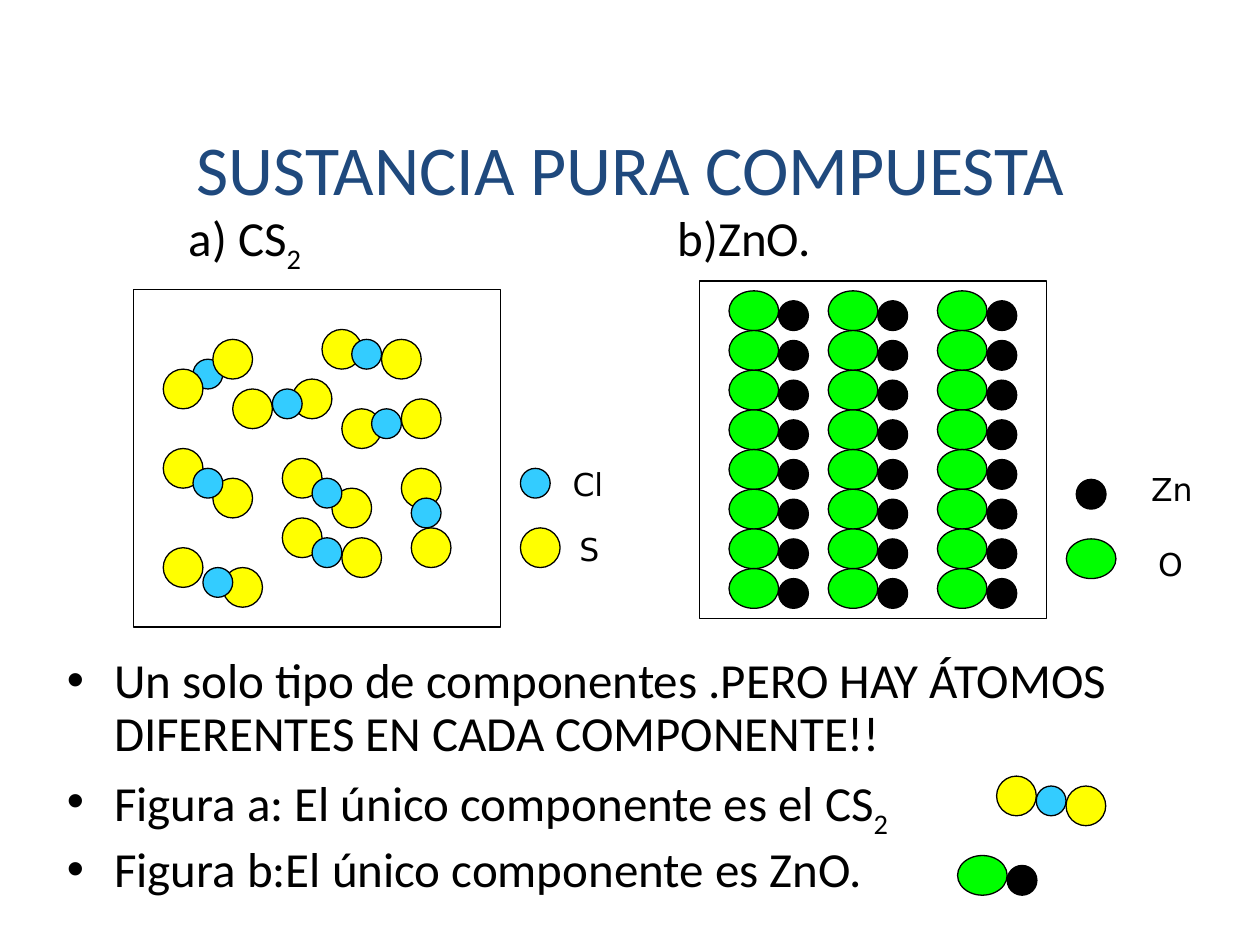
import dataclasses

import pptx
import pptx.dml.color
import pptx.enum.shapes
import pptx.enum.text
import pptx.util


@dataclasses.dataclass(frozen=True)
class Theme:
    """Colours, type sizes and the drawing grid."""
    title: str = "1F497D"
    ink: str = "000000"
    font: str = "Calibri"
    label_font: str = "DejaVu Sans"
    title_size: int = 40
    body_size: int = 28
    label_size: int = 18
    line: float = 0.75
    cell: int = pptx.util.Mm(2)


THEME = Theme()

ATOMS = {
    "S": ("FFFF00", 4, 4),
    "Cl": ("33CCFF", 3, 3),
    "O": ("00FF00", 5, 4),
    "Zn": ("000000", 3, 3),
}

CS2_MOLECULES = [
    [("Cl", 6, 7), ("S", 8, 5), ("S", 3, 8)],
    [("S", 19, 4), ("S", 25, 5), ("Cl", 22, 5)],
    [("S", 10, 10), ("S", 16, 9), ("Cl", 14, 10)],
    [("S", 21, 12), ("S", 27, 11), ("Cl", 24, 12)],
    [("S", 3, 16), ("S", 8, 19), ("Cl", 6, 18)],
    [("S", 15, 17), ("S", 20, 20), ("Cl", 18, 19)],
    [("S", 15, 23), ("S", 21, 25), ("Cl", 18, 25)],
    [("S", 3, 26), ("S", 9, 28), ("Cl", 7, 28)],
    [("S", 27, 18), ("Cl", 28, 21), ("S", 28, 24)],
]
CS2_EXAMPLE = [("S", 0, 0), ("Cl", 4, 1), ("S", 7, 1)]
ZNO_PAIR = [("O", 0, 0), ("Zn", 5, 1)]


def origin(left, top):
    """Return a corner given in inches as slide lengths."""
    return pptx.util.Inches(left), pptx.util.Inches(top)


def grid_box(corner, column, row, columns, rows):
    """Return the place and size of a block of grid cells."""
    left, top = corner
    lengths = [round(count * THEME.cell) for count in (column, row, columns, rows)]
    return left + lengths[0], top + lengths[1], lengths[2], lengths[3]


def style_font(font, name, size, colour):
    """Set the face, size and colour of a font."""
    font.name = name
    font.size = pptx.util.Pt(size)
    font.color.rgb = pptx.dml.color.RGBColor.from_string(colour)


def add_outlined(page, kind, box, colour=None):
    """Add a thinly outlined shape, filled if a colour is given."""
    shape = page.shapes.add_shape(kind, *box)
    shape.shadow.inherit = False
    if colour:
        shape.fill.solid()
        shape.fill.fore_color.rgb = pptx.dml.color.RGBColor.from_string(colour)
    else:
        shape.fill.background()
    shape.line.color.rgb = pptx.dml.color.RGBColor.from_string(THEME.ink)
    shape.line.width = pptx.util.Pt(THEME.line)


def add_frame(page, corner, columns, rows):
    """Draw the container of a figure."""
    kind = pptx.enum.shapes.MSO_SHAPE.RECTANGLE
    add_outlined(page, kind, grid_box(corner, 0, 0, columns, rows))


def add_atoms(page, corner, atoms, column=0, row=0):
    """Draw a group of atoms shifted by a number of cells."""
    for name, across, down in atoms:
        colour, columns, rows = ATOMS[name]
        box = grid_box(corner, column + across, row + down, columns, rows)
        add_outlined(page, pptx.enum.shapes.MSO_SHAPE.OVAL, box, colour)


def add_legend(page, corner, entries):
    """Draw each legend atom and its label."""
    for name, atom_place, label_place in entries:
        add_atoms(page, corner, [(name, *atom_place)])
        box = page.shapes.add_textbox(*grid_box(corner, *label_place, 5))
        box.text_frame.word_wrap = True
        box.text_frame.text = name
        span = box.text_frame.paragraphs[0].runs[0]
        style_font(span.font, THEME.label_font, THEME.label_size, THEME.ink)


def write_formula(para, text, subscript=""):
    """Write body text with an optional subscript at its end."""
    para.text = text
    if subscript:
        span = para.add_run()
        span.text = subscript
        span._r.get_or_add_rPr().set("baseline", "-25000")
    for span in para.runs:
        style_font(span.font, THEME.font, THEME.body_size, THEME.ink)


def place(shape, left, top, width, height):
    """Move a placeholder to a box in inches."""
    shape.left, shape.top = origin(left, top)
    shape.width, shape.height = origin(width, height)
    shape.text_frame.auto_size = pptx.enum.text.MSO_AUTO_SIZE.NONE


def add_title(page, box):
    """Fill the title placeholder."""
    title = page.shapes.title
    place(title, *box)
    title.text_frame.text = "SUSTANCIA PURA COMPUESTA"
    para = title.text_frame.paragraphs[0]
    para.alignment = pptx.enum.text.PP_ALIGN.CENTER
    style_font(para.runs[0].font, THEME.font, THEME.title_size, THEME.title)


def add_caption(page, box, text, subscript=""):
    """Write the caption above a figure."""
    left, top, width, height = box
    caption = page.shapes.add_textbox(*origin(left, top), *origin(width, height))
    caption.text_frame.word_wrap = True
    write_formula(caption.text_frame.paragraphs[0], text, subscript)


def add_cs2_figure(page, corner):
    """Draw the loose CS2 molecules and their legend."""
    add_frame(page, corner, 37, 34)
    for molecule in CS2_MOLECULES:
        add_atoms(page, corner, molecule)
    add_legend(page, corner, [
        ("Cl", (39, 18), (43, 17, 6)),
        ("S", (39, 24), (43.7, 23.6, 5)),
    ])


def add_zno_figure(page, corner):
    """Draw the ordered ZnO pairs and their legend."""
    add_frame(page, corner, 35, 34)
    for column in (3, 13, 24):
        for row in range(1, 33, 4):
            add_atoms(page, corner, ZNO_PAIR, column, row)
    add_legend(page, corner, [
        ("Zn", (38, 20), (44.3, 18.4, 8)),
        ("O", (37, 26), (45, 26, 6)),
    ])


def add_conclusions(page, box):
    """Fill the bulleted list and draw the two single components."""
    body = page.placeholders[1]
    place(body, *box)
    lines = [
        ("Un solo tipo de componentes .PERO HAY ÁTOMOS DIFERENTES EN CADA COMPONENTE!!", ""),
        ("Figura a: El único componente es el CS", "2"),
        ("Figura b:El único componente es ZnO.", ""),
    ]
    frame = body.text_frame
    for index, (text, subscript) in enumerate(lines):
        para = frame.add_paragraph() if index else frame.paragraphs[0]
        write_formula(para, text, subscript)
        para.line_spacing = 0.9
        para.space_before = pptx.util.Pt(6.5 if index else 0)
    left, top = box[:2]
    add_atoms(page, origin(left + 7.48, top + 1), CS2_EXAMPLE)
    add_atoms(page, origin(left + 7.17, top + 1.63), ZNO_PAIR)


def main():
    """Build and save the slide."""
    deck = pptx.Presentation()
    deck.slide_width, deck.slide_height = origin(10, 7.5)
    page = deck.slides.add_slide(deck.slide_layouts[1])
    add_title(page, (0.5, 1, 9, 0.66))
    add_caption(page, (1.4, 1.6, 2.5, 0.6), "a) CS", "2")
    add_caption(page, (5.28, 1.6, 2.5, 0.6), "b)ZnO.")
    add_cs2_figure(page, origin(1.06, 2.3))
    add_zno_figure(page, origin(5.55, 2.23))
    add_conclusions(page, (0.43, 5.16, 9.14, 2.34))
    deck.save("out.pptx")


if __name__ == "__main__":
    main()
